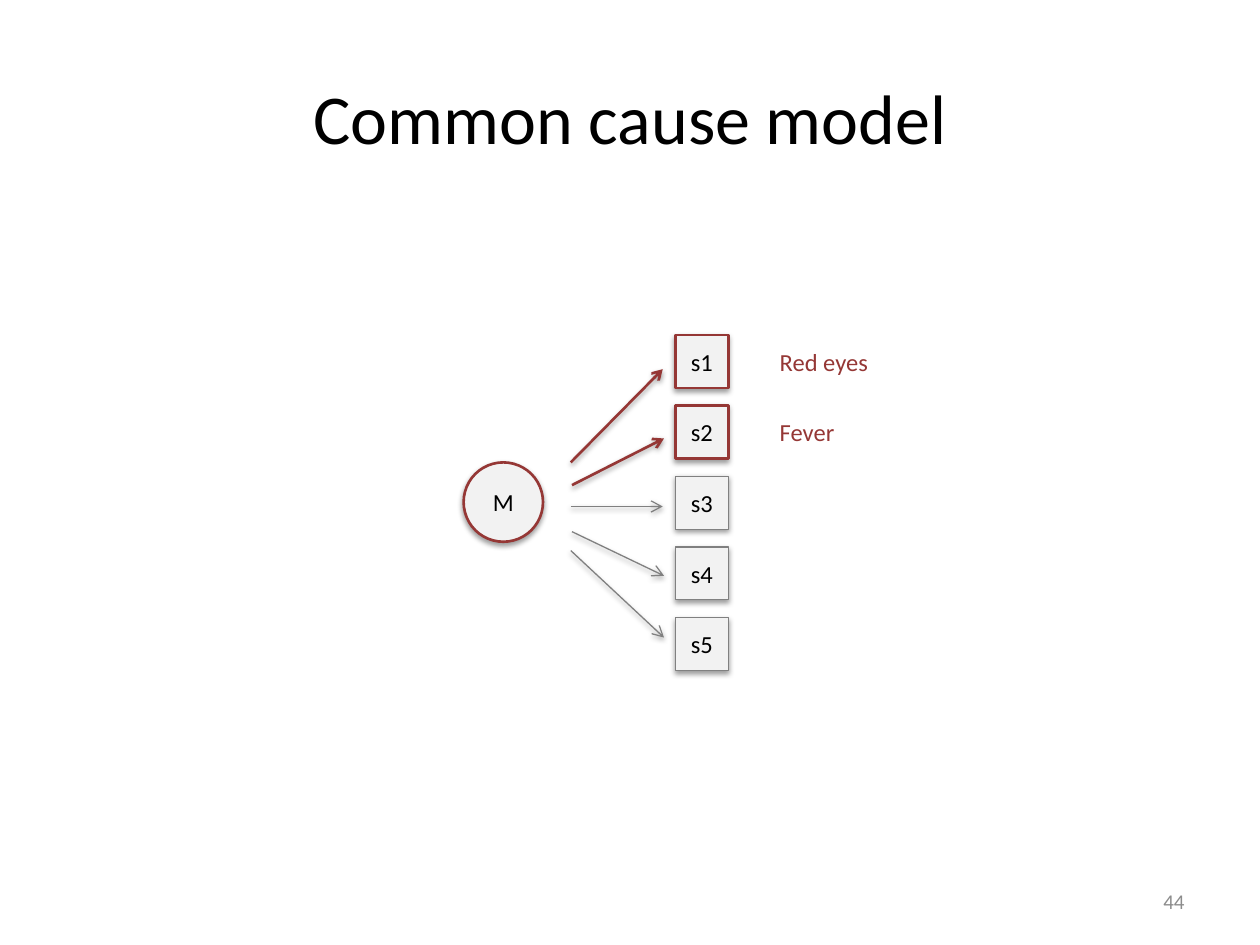
from lxml.etree import SubElement
from pptx import Presentation
from pptx.dml.color import RGBColor
from pptx.enum.shapes import MSO_CONNECTOR, MSO_SHAPE
from pptx.enum.text import MSO_ANCHOR, PP_ALIGN
from pptx.oxml.ns import qn
from pptx.util import Inches, Pt

BLACK = RGBColor(0x00, 0x00, 0x00)
WHITE = RGBColor(0xFF, 0xFF, 0xFF)
LIGHT = RGBColor(0xF2, 0xF2, 0xF2)
GREY = RGBColor(0x80, 0x80, 0x80)
NUMBER_GREY = RGBColor(0x8C, 0x8C, 0x8C)
RED = RGBColor(0x95, 0x37, 0x35)


class Deck:
    font = "Calibri"

    def __init__(self, width, height):
        self.prs = Presentation()
        self.prs.slide_width = Inches(width)
        self.prs.slide_height = Inches(height)
        self.slide = None

    def add_slide(self):
        self.slide = self.prs.slides.add_slide(self.prs.slide_layouts[5])

    def set_text(self, sp, text, size, color, align):
        tf = sp.text_frame
        tf.word_wrap = True
        tf.vertical_anchor = MSO_ANCHOR.MIDDLE
        p = tf.paragraphs[0]
        p.text = text
        p.alignment = align
        p.font.name = self.font
        p.font.size = Pt(size)
        p.font.color.rgb = color

    def title(self, text, x, y, w, h):
        sp = self.slide.shapes.title
        sp.left, sp.top, sp.width, sp.height = map(Inches, (x, y, w, h))
        self.set_text(sp, text, 40, BLACK, PP_ALIGN.CENTER)

    def number(self, text, x, y, w, h):
        sp = self.slide.shapes.add_textbox(*map(Inches, (x, y, w, h)))
        self.set_text(sp, text, 12, NUMBER_GREY, PP_ALIGN.RIGHT)

    def outline(self, sp, color):
        sp.line.color.rgb = color
        sp.line.width = Pt(0.75 if color == GREY else 1.5)

    def shadow(self, effects):
        shadow = SubElement(effects, qn("a:outerShdw"), blurRad=str(Pt(3.1)),
                            dist=str(Pt(1.6)), dir="5400000", rotWithShape="0")
        color = SubElement(shadow, qn("a:srgbClr"), val=str(BLACK))
        SubElement(color, qn("a:alpha"), val="38000")

    def shape(self, kind, text, x, y, w, h, fill, line, color, align):
        sp = self.slide.shapes.add_shape(kind, *map(Inches, (x, y, w, h)))
        sp.shadow.inherit = False
        sp.fill.solid()
        sp.fill.fore_color.rgb = fill
        self.outline(sp, line)
        self.set_text(sp, text, 14, color, align)
        return sp

    def node(self, kind, text, x, y, size, line):
        sp = self.shape(kind, text, x, y, size, size, LIGHT, line, BLACK, PP_ALIGN.CENTER)
        self.shadow(sp.element.spPr.find(qn("a:effectLst")))

    def label(self, text, x, y, w, h):
        self.shape(MSO_SHAPE.RECTANGLE, text, x, y, w, h, WHITE, WHITE, RED, PP_ALIGN.LEFT)

    def arrow(self, x1, y1, x2, y2, color):
        cxn = self.slide.shapes.add_connector(
            MSO_CONNECTOR.STRAIGHT, *map(Inches, (x1, y1, x2, y2)))
        self.outline(cxn, color)
        spPr = cxn.element.spPr
        SubElement(spPr.find(qn("a:ln")), qn("a:tailEnd"), type="arrow")
        self.shadow(SubElement(spPr, qn("a:effectLst")))


def main():
    deck = Deck(10, 7.5)
    deck.add_slide()
    deck.title("Common cause model", 0.5, 0.3, 9, 1.25)
    deck.number("44", 7.17, 6.95, 2.33, 0.4)

    top, pitch, size = 2.66, 0.56, 0.42
    symptoms = [
        ("s1", "Red eyes", (4.53, 3.67, 5.26, 2.93)),
        ("s2", "Fever", (4.54, 3.85, 5.27, 3.48)),
        ("s3", None, (4.53, 4.02, 5.26, 4.02)),
        ("s4", None, (4.54, 4.22, 5.27, 4.57)),
        ("s5", None, (4.53, 4.37, 5.27, 5.06)),
    ]
    deck.node(MSO_SHAPE.OVAL, "M", 3.68, 3.67, 0.63, RED)
    for i, (name, finding, ends) in enumerate(symptoms):
        y = top + i * pitch
        color = RED if finding else GREY
        deck.node(MSO_SHAPE.RECTANGLE, name, 5.36, y, size, color)
        deck.arrow(*ends, color)
        if finding:
            deck.label(finding, 6.09, y, 2.63, size)

    deck.prs.save("out.pptx")


if __name__ == "__main__":
    main()
